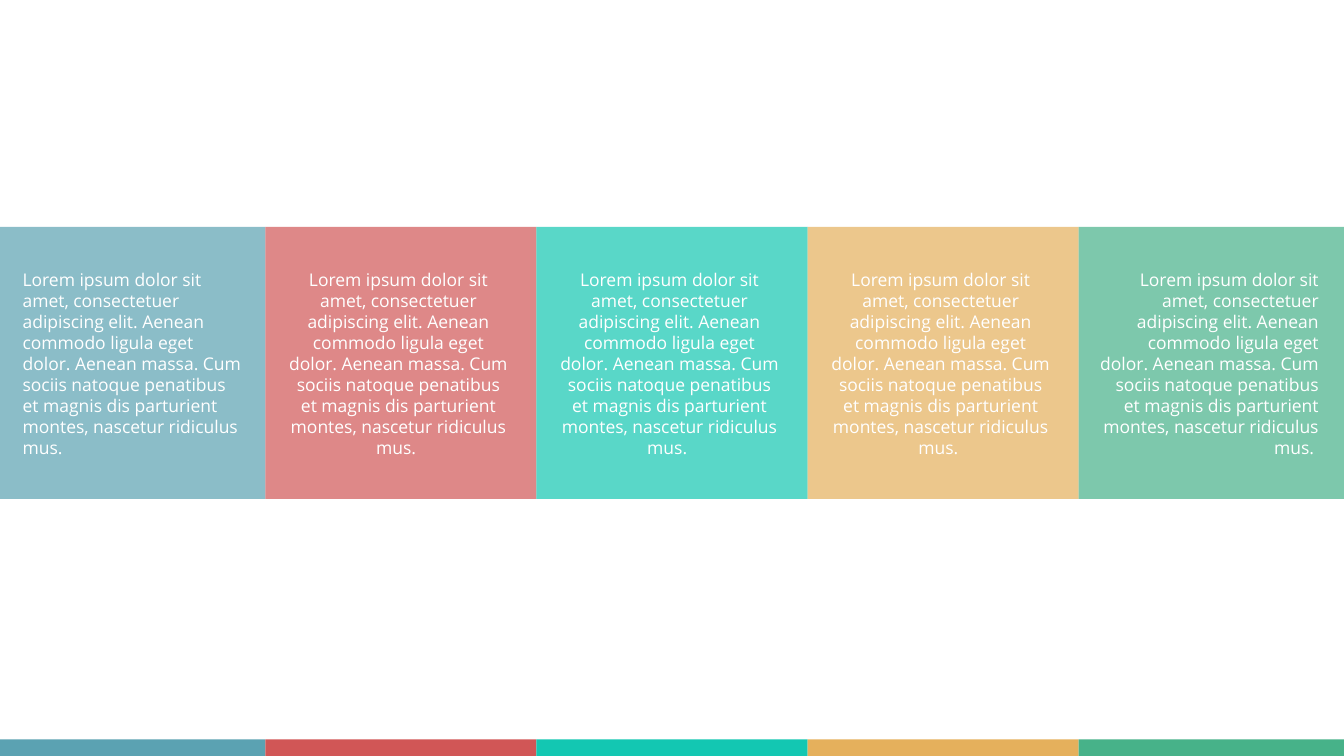
from dataclasses import dataclass

from lxml.etree import SubElement
from pptx import Presentation
from pptx.dml.color import RGBColor
from pptx.enum.shapes import MSO_SHAPE
from pptx.enum.text import MSO_ANCHOR, MSO_AUTO_SIZE, PP_ALIGN
from pptx.oxml.ns import qn
from pptx.slide import Slide
from pptx.util import Inches, Pt

BLUE = RGBColor(0x5B, 0xA2, 0xB2)
RED = RGBColor(0xD1, 0x56, 0x56)
TURQUOISE = RGBColor(0x13, 0xC7, 0xB2)
AMBER = RGBColor(0xE5, 0xB0, 0x5C)
GREEN = RGBColor(0x47, 0xB2, 0x89)
WHITE = RGBColor(0xFF, 0xFF, 0xFF)

# Slide and grid, in inches: three inner columns, the outer two share the rest
SLIDE_WIDTH, SLIDE_HEIGHT = 26.67, 15
INNER_WIDTH = 5.38
OUTER_WIDTH = (SLIDE_WIDTH - 3 * INNER_WIDTH) / 2
PANEL_TOP, PANEL_HEIGHT = 0.3 * SLIDE_HEIGHT, 0.36 * SLIDE_HEIGHT
FOOTER_HEIGHT = 0.33
COPY_TOP, COPY_WIDTH, COPY_HEIGHT = 5.28, 4.58, 3.89

LOREM = (
    "Lorem ipsum dolor sit amet, consectetuer adipiscing elit. "
    "Aenean commodo ligula eget dolor. Aenean massa. Cum sociis natoque "
    "penatibus et magnis dis parturient montes, nascetur ridiculus mus."
)


@dataclass(frozen=True)
class Column:
    color: RGBColor
    width: float
    align: PP_ALIGN
    copy: str = LOREM + " "
    indent: float = 0.35


COLUMNS = [
    Column(BLUE, OUTER_WIDTH, PP_ALIGN.LEFT, copy=LOREM),
    Column(RED, INNER_WIDTH, PP_ALIGN.CENTER),
    Column(TURQUOISE, INNER_WIDTH, PP_ALIGN.CENTER),
    Column(AMBER, INNER_WIDTH, PP_ALIGN.CENTER),
    Column(GREEN, OUTER_WIDTH, PP_ALIGN.RIGHT, indent=0.28),
]


def add_block(slide: Slide, column: Column, left: float, top: float,
              height: float, opacity: int = 100) -> None:
    block = slide.shapes.add_shape(
        MSO_SHAPE.RECTANGLE, Inches(left), Inches(top),
        Inches(column.width), Inches(height))
    block.shadow.inherit = False
    block.line.fill.background()
    block.fill.solid()
    block.fill.fore_color.rgb = column.color
    if opacity < 100:
        color = block.fill._xPr.find(qn("a:solidFill"))[0]
        SubElement(color, qn("a:alpha"), val=str(opacity * 1000))


def add_copy(slide: Slide, column: Column, left: float) -> None:
    box = slide.shapes.add_textbox(
        Inches(left + column.indent), Inches(COPY_TOP),
        Inches(COPY_WIDTH), Inches(COPY_HEIGHT))
    frame = box.text_frame
    frame.word_wrap = True
    frame.auto_size = MSO_AUTO_SIZE.SHAPE_TO_FIT_TEXT
    frame.vertical_anchor = MSO_ANCHOR.TOP
    paragraph = frame.paragraphs[0]
    paragraph.alignment = column.align
    paragraph.line_spacing = Pt(30)
    run = paragraph.add_run()
    run.text = column.copy
    run.font.name = "Open Sans"
    run.font.size = Pt(25)
    run.font.color.rgb = WHITE


def main() -> None:
    deck = Presentation()
    deck.slide_width, deck.slide_height = Inches(SLIDE_WIDTH), Inches(SLIDE_HEIGHT)
    slide = deck.slides.add_slide(deck.slide_layouts[6])
    lefts = [sum(c.width for c in COLUMNS[:i]) for i in range(len(COLUMNS))]

    # Footer strip
    for column, left in zip(COLUMNS, lefts):
        add_block(slide, column, left, SLIDE_HEIGHT - FOOTER_HEIGHT, FOOTER_HEIGHT)

    # Translucent panels
    for column, left in zip(COLUMNS, lefts):
        add_block(slide, column, left, PANEL_TOP, PANEL_HEIGHT, opacity=70)

    # Copy on the panels
    for column, left in zip(COLUMNS, lefts):
        add_copy(slide, column, left)

    deck.save("out.pptx")


if __name__ == "__main__":
    main()
